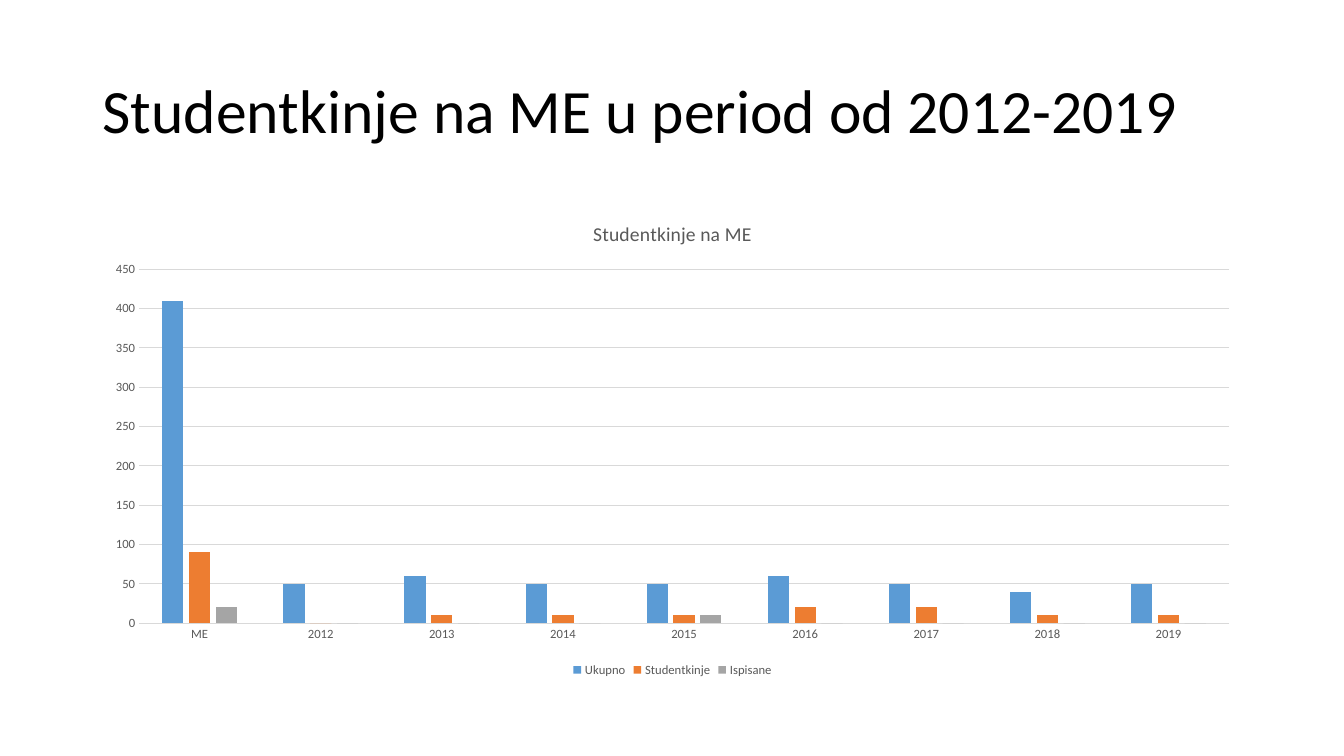
"""Build a slide charting female students at ME from 2012 to 2019."""

from dataclasses import dataclass
from typing import Any

from pptx import Presentation
from pptx.chart.chart import Chart
from pptx.chart.data import CategoryChartData
from pptx.dml.color import RGBColor
from pptx.enum.chart import XL_CHART_TYPE, XL_LEGEND_POSITION, XL_TICK_MARK
from pptx.enum.text import MSO_ANCHOR
from pptx.slide import Slide
from pptx.util import Inches, Pt


@dataclass(frozen=True)
class Theme:
    font: str = "Calibri"
    heading: str = "000000"
    label: str = "595959"
    grid: str = "D9D9D9"
    heading_size: float = 44
    chart_title_size: float = 14
    label_size: float = 9
    line_width: float = 0.75


@dataclass(frozen=True)
class StudentGroup:
    name: str
    counts: tuple[int, ...]
    color: str


THEME = Theme()
PERIODS = ("ME", *(str(year) for year in range(2012, 2020)))
GROUPS = (
    StudentGroup("Ukupno", (410, 50, 60, 50, 50, 60, 50, 40, 50), "5B9BD5"),
    StudentGroup("Studentkinje", (90, 0, 10, 10, 10, 20, 20, 10, 10), "ED7D31"),
    StudentGroup("Ispisane", (20, 0, 0, 0, 10, 0, 0, 0, 0), "A5A5A5"),
)


def apply_format(target: Any, values: dict[str, Any]) -> None:
    """Set each named attribute on the target."""
    for name, value in values.items():
        setattr(target, name, value)


def style_font(font: Any, size: float, color: str) -> None:
    """Give a font the theme face with a size and colour."""
    apply_format(font, {"name": THEME.font, "size": Pt(size), "bold": False})
    font.color.rgb = RGBColor.from_string(color)


def style_line(line: Any) -> None:
    """Draw a line in the grid colour."""
    line.color.rgb = RGBColor.from_string(THEME.grid)
    line.width = Pt(THEME.line_width)


def add_heading(slide: Slide, wording: str) -> None:
    """Add the slide heading."""
    heading = slide.shapes.add_textbox(Inches(0.92), Inches(0.4), Inches(11.5), Inches(1.45))
    apply_format(heading.text_frame, {"word_wrap": True, "vertical_anchor": MSO_ANCHOR.MIDDLE})
    sentence = heading.text_frame.paragraphs[0]
    apply_format(sentence, {"text": wording, "line_spacing": 0.9})
    style_font(sentence.runs[0].font, THEME.heading_size, THEME.heading)


def style_axes(chart: Chart) -> None:
    """Format both axes and the gridlines."""
    scale = {"minimum_scale": 0, "maximum_scale": 450, "major_unit": 50}
    for axis, values in (
        (chart.category_axis, {"has_major_gridlines": False}),
        (chart.value_axis, {"has_major_gridlines": True, **scale}),
    ):
        ticks = {"major_tick_mark": XL_TICK_MARK.NONE, "minor_tick_mark": XL_TICK_MARK.NONE}
        apply_format(axis, {**ticks, **values})
        style_font(axis.tick_labels.font, THEME.label_size, THEME.label)
    style_line(chart.category_axis.format.line)
    style_line(chart.value_axis.major_gridlines.format.line)
    chart.value_axis.format.line.fill.background()


def add_student_chart(slide: Slide, title: str) -> None:
    """Add the clustered columns for all student groups."""
    enrolment = CategoryChartData()
    enrolment.categories = PERIODS
    for group in GROUPS:
        enrolment.add_series(group.name, group.counts)
    chart = slide.shapes.add_chart(
        XL_CHART_TYPE.COLUMN_CLUSTERED,
        Inches(0.92), Inches(2), Inches(11.5), Inches(4.76), enrolment,
    ).chart
    style_font(chart.font, THEME.label_size, THEME.label)
    apply_format(chart, {"has_title": True, "has_legend": True})
    caption = chart.chart_title.text_frame.paragraphs[0]
    caption.text = title
    style_font(caption.runs[0].font, THEME.chart_title_size, THEME.label)
    apply_format(chart.legend, {"position": XL_LEGEND_POSITION.BOTTOM, "include_in_layout": False})
    style_font(chart.legend.font, THEME.label_size, THEME.label)
    style_axes(chart)
    columns = chart.plots[0]
    apply_format(columns, {"gap_width": 219, "overlap": -27, "vary_by_categories": False})
    for group, series in zip(GROUPS, columns.series):
        series.format.fill.solid()
        series.format.fill.fore_color.rgb = RGBColor.from_string(group.color)


def main() -> None:
    """Build and save the presentation."""
    deck = Presentation()
    apply_format(deck, {"slide_width": Inches(13.33), "slide_height": Inches(7.5)})
    slide = deck.slides.add_slide(deck.slide_layouts[6])
    add_heading(slide, "Studentkinje na ME u period od 2012-2019")
    add_student_chart(slide, "Studentkinje na ME")
    deck.save("out.pptx")


if __name__ == "__main__":
    main()
